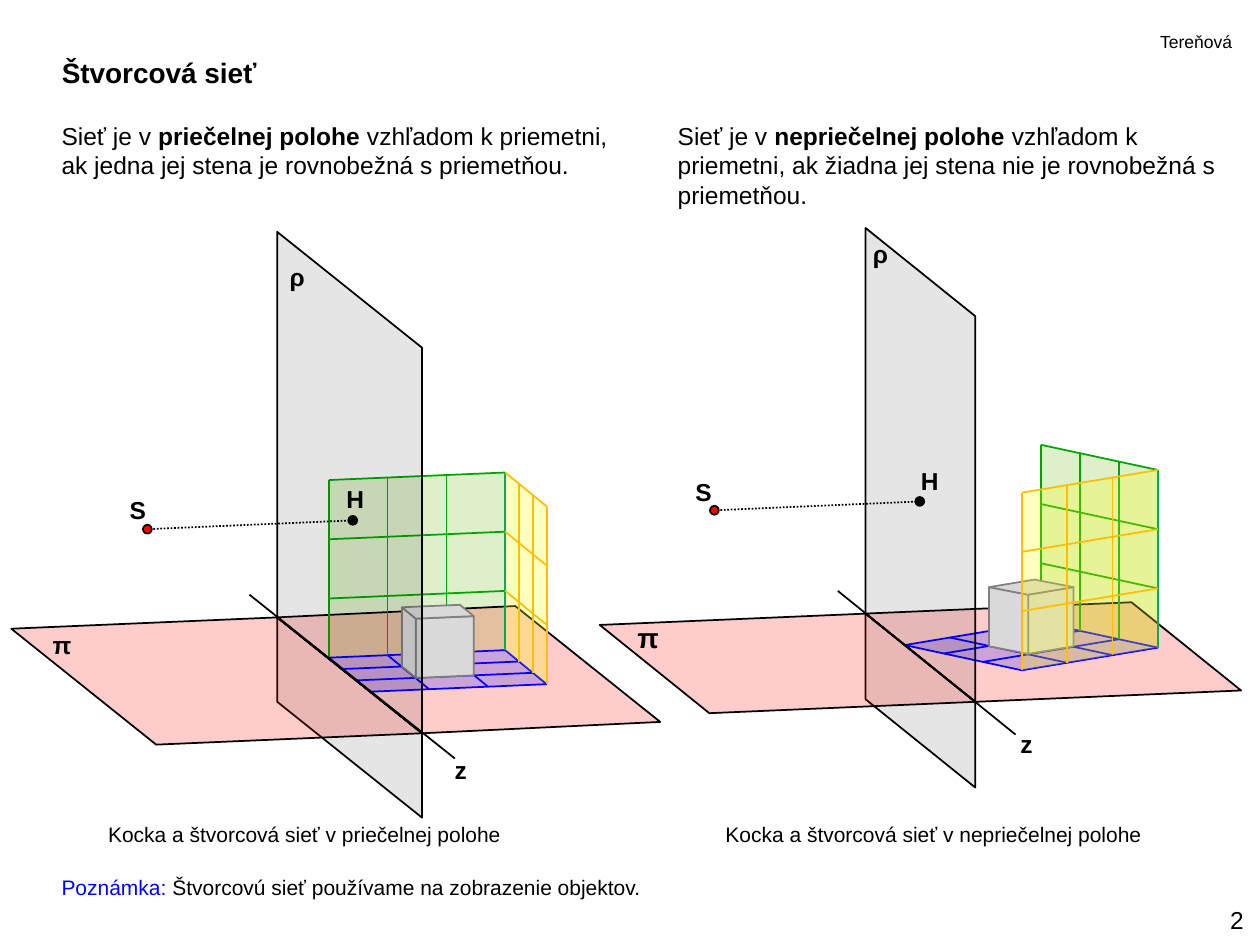
from lxml.etree import SubElement
from pptx import Presentation
from pptx.dml.color import RGBColor
from pptx.enum.dml import MSO_LINE
from pptx.enum.shapes import MSO_CONNECTOR as CONNECTOR, MSO_SHAPE as SHAPE
from pptx.enum.text import MSO_ANCHOR as ANCHOR, MSO_AUTO_SIZE as AUTO_SIZE, PP_ALIGN as ALIGN
from pptx.oxml.ns import qn
from pptx.util import Inches, Pt

COLORS = {
    "black": "000000", "red": "FF0000", "blue": "0000FF",
    "green": "00A500", "edge": "00B050", "leaf": "92D050",
    "gold": "FFBF00", "yellow": "FFFF00", "gray": "808080", "light": "D9D9D9",
}
CELLS = 3  # squares along each side of the net

# Points and vectors are complex numbers in inches: x + y*1j.
# Points are measured from the top left corner of the scene's box.
FRONTAL = {
    "box": (0.09, 1.84),
    "axis": 1.15 + 0.92j, "axis_end": 1.41 + 1.12j,
    "floor_right": 1.89 - 0.09j, "below": 0.67j,
    "corner": 3.92 + 3.32j, "back": -1.40 + 0.06j, "side": 0.33 + 0.27j,
    "side_in_front": False,
    "cube": (3.21 + 3.54j, 0.46 - 0.02j, -0.11 - 0.09j),
    "S": 1.08 + 2.36j, "H": 2.71 + 2.29j,
    "labels": [("ρ", 2.11, 0.19, 0.31, 14), ("z", 3.42, 4.10, 0.30, 14),
               ("π", 0.23, 3.11, 0.31, 14), ("S", 0.84, 2.04, 0.33, 14),
               ("H", 2.56, 1.95, 0.34, 14)],
}
OBLIQUE = {
    "box": (4.76, 1.81),
    "axis": 0.87 + 0.70j, "axis_end": 1.19 + 0.96j,
    "floor_right": 2.11 - 0.09j, "below": 0.68j,
    "corner": 3.50 + 3.13j, "back": 0.93 + 0.20j, "side": -1.08 + 0.18j,
    "side_in_front": True,
    "cube": (3.40 + 3.38j, 0.36 - 0.06j, -0.31 - 0.06j),
    "S": 0.91 + 2.24j, "H": 2.54 + 2.17j,
    "labels": [("ρ", 2.07, 0.04, 0.31, 14), ("z", 3.24, 3.93, 0.30, 14),
               ("π", 0.20, 3.07, 0.32, 16), ("S", 0.66, 1.93, 0.33, 14),
               ("H", 2.45, 1.84, 0.34, 14)],
}


def color(name):
    return RGBColor.from_string(COLORS[name])


def paint(shape, fill, opacity=100, line=None):
    shape.shadow.inherit = False
    shape.fill.solid()
    shape.fill.fore_color.rgb = color(fill)
    if opacity < 100:
        tone = shape._element.spPr.find(qn("a:solidFill"))[0]
        SubElement(tone, qn("a:alpha"), val=str(opacity * 1000))
    if line:
        shape.line.color.rgb = color(line)
        shape.line.width = Pt(1)
    else:
        shape.line.fill.background()


def write(shape, runs, size, bold=False, wrap=False):
    """Fill a text shape with (text, bold, color) runs."""
    frame = shape.text_frame
    frame.word_wrap = wrap
    frame.auto_size = AUTO_SIZE.SHAPE_TO_FIT_TEXT
    paragraph = frame.paragraphs[0]
    for text, strong, tone in runs:
        run = paragraph.add_run()
        run.text = text
        run.font.name = "Arial"
        run.font.size = Pt(size)
        run.font.bold = strong or bold
        run.font.color.rgb = color(tone)
    return paragraph


def add_text(slide, box, runs, size, bold=False, wrap=False):
    shape = slide.shapes.add_textbox(*map(Inches, box))
    if isinstance(runs, str):
        runs = [(runs, False, "black")]
    paragraph = write(shape, runs, size, bold, wrap)
    return shape, paragraph


def add_scene(slide, scene):
    """Draw the ground plane, picture plane, square net and cube."""
    left, top = scene["box"]
    offset = complex(left, top)

    def place(point):
        point += offset
        return Inches(point.real), Inches(point.imag)

    def line(start, end, tone):
        connector = slide.shapes.add_connector(CONNECTOR.STRAIGHT, *place(start), *place(end))
        connector.line.color.rgb = color(tone)
        connector.line.width = Pt(1)
        SubElement(connector._element.spPr, qn("a:effectLst"))
        return connector

    def face(start, u, v, fill, opacity=100, outline=None):
        builder = slide.shapes.build_freeform(*place(start), scale=1.0)
        builder.add_line_segments([place(start + u), place(start + u + v), place(start + v)])
        paint(builder.convert_to_shape(), fill, opacity, outline)

    def rulings(start, along, across, tone, steps):
        for step in steps:
            first = start + across * step / CELLS
            line(first, first + along, tone)

    def dot(center, tone):
        shape = slide.shapes.add_shape(SHAPE.OVAL, *place(center - 0.035 - 0.035j),
                                       Inches(0.07), Inches(0.07))
        paint(shape, tone, line="black")

    axis_start, axis = 2.11 + 3.06j, scene["axis"]
    corner, back, side, height = scene["corner"], scene["back"], scene["side"], -1.41j
    in_front = scene["side_in_front"]
    upper_steps = range(1, CELLS + 1)

    def side_wall():
        start = corner + back if in_front else corner
        face(start, side, height, "yellow", 25)
        line(start, start + height, "edge")
        rulings(start, side, height, "gold", upper_steps)
        rulings(start, height, side, "gold", upper_steps)

    # Back wall, lower picture plane and right part of the ground
    face(corner, back, height, "leaf", 30)
    face(axis_start, axis, scene["below"], "black", 10, "black")
    face(axis_start, axis, scene["floor_right"], "red", 20, "black")

    # Net on the floor and on the walls
    face(corner, back, side, "blue", 20)
    rulings(corner, side, back, "blue", range(CELLS + 1))
    rulings(corner, back, side, "blue", range(CELLS + 1))
    rulings(corner, back, height, "green", upper_steps)
    rulings(corner, height, back, "green", range(CELLS) if in_front else upper_steps)
    if not in_front:
        side_wall()

    # Cube: two visible sides and the top
    foot, right_edge, left_edge = scene["cube"]
    rise = -0.47j
    face(foot, right_edge, rise, "light", outline="gray")
    face(foot, left_edge, rise, "light", outline="gray")
    face(foot + rise, right_edge, left_edge, "light", outline="gray")

    # Upper picture plane, left part of the ground and the axis
    face(axis_start, axis, -3.06j, "black", 10, "black")
    face(axis_start, axis, -2.11 + 0.09j, "red", 20, "black")
    line(axis_start - 0.22 - 0.18j, axis_start + scene["axis_end"], "black")

    # Line of sight from the eye to the main point
    line(scene["H"], scene["S"], "black").line.dash_style = MSO_LINE.ROUND_DOT
    dot(scene["S"], "red")
    dot(scene["H"], "black")
    if in_front:
        side_wall()

    for text, x, y, width, size in scene["labels"]:
        add_text(slide, (left + x, top + y, width, 0.34), text, size, bold=True)


def add_heading(slide):
    title = slide.shapes.title
    title.left, title.top, title.width, title.height = map(Inches, (0.39, 0.39, 1.77, 0.37))
    write(title, [("Štvorcová sieť", True, "black")], 16).alignment = ALIGN.LEFT
    title.text_frame.vertical_anchor = ANCHOR.TOP
    add_text(slide, (9.11, 0.2, 0.79, 0.27), "Tereňová", 10)


def add_definition(slide, box, term, rest):
    runs = [("Sieť je v ", False, "black"), (term, True, "black"), (rest, False, "black")]
    add_text(slide, box, runs, 14, wrap=True)


def add_footer(slide):
    note = [("Poznámka:", False, "blue"),
            (" Štvorcovú sieť používame na zobrazenie objektov.", False, "black")]
    add_text(slide, (0.39, 6.89, 4.83, 0.3), note, 12)
    shape, paragraph = add_text(slide, (9.53, 7.13, 0.44, 0.34), "2", 14)
    shape.text_frame.vertical_anchor = ANCHOR.MIDDLE
    paragraph.alignment = ALIGN.RIGHT


def main():
    presentation = Presentation()
    presentation.slide_width, presentation.slide_height = Inches(10), Inches(7.5)
    slide = presentation.slides.add_slide(presentation.slide_layouts[5])
    add_heading(slide)
    add_definition(slide, (0.39, 0.91, 4.76, 0.57), "priečelnej polohe",
                   " vzhľadom k priemetni, ak jedna jej stena je rovnobežná s priemetňou.")
    add_definition(slide, (5.28, 0.91, 4.72, 0.81), "nepriečelnej polohe",
                   " vzhľadom k priemetni, ak žiadna jej stena nie je rovnobežná s priemetňou.")
    add_scene(slide, OBLIQUE)
    add_scene(slide, FRONTAL)
    add_text(slide, (0.76, 6.47, 3.34, 0.3), "Kocka a štvorcová sieť v priečelnej polohe", 12)
    add_text(slide, (5.66, 6.47, 3.53, 0.3), "Kocka a štvorcová sieť v nepriečelnej polohe", 12)
    add_footer(slide)
    presentation.save("out.pptx")


if __name__ == "__main__":
    main()
